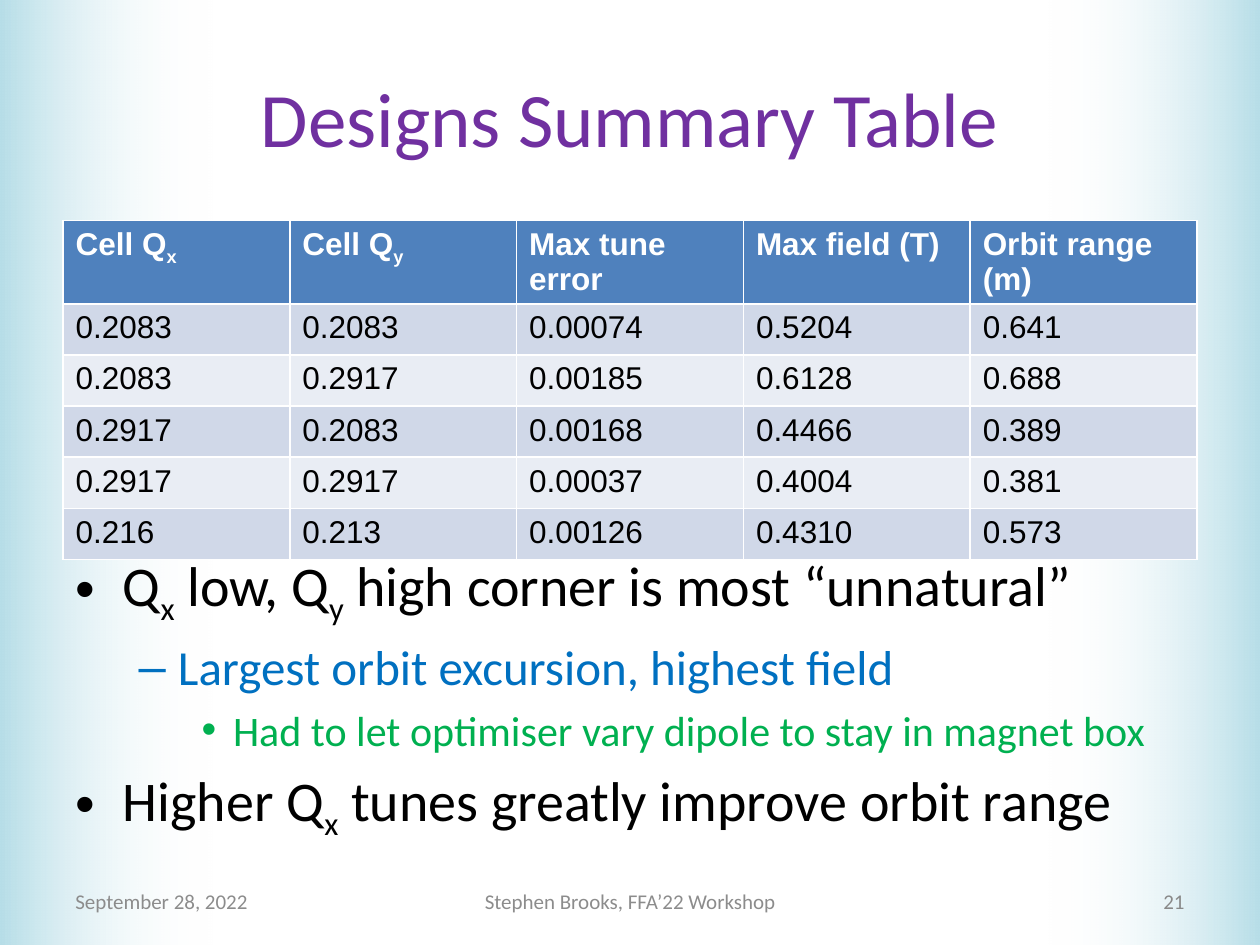
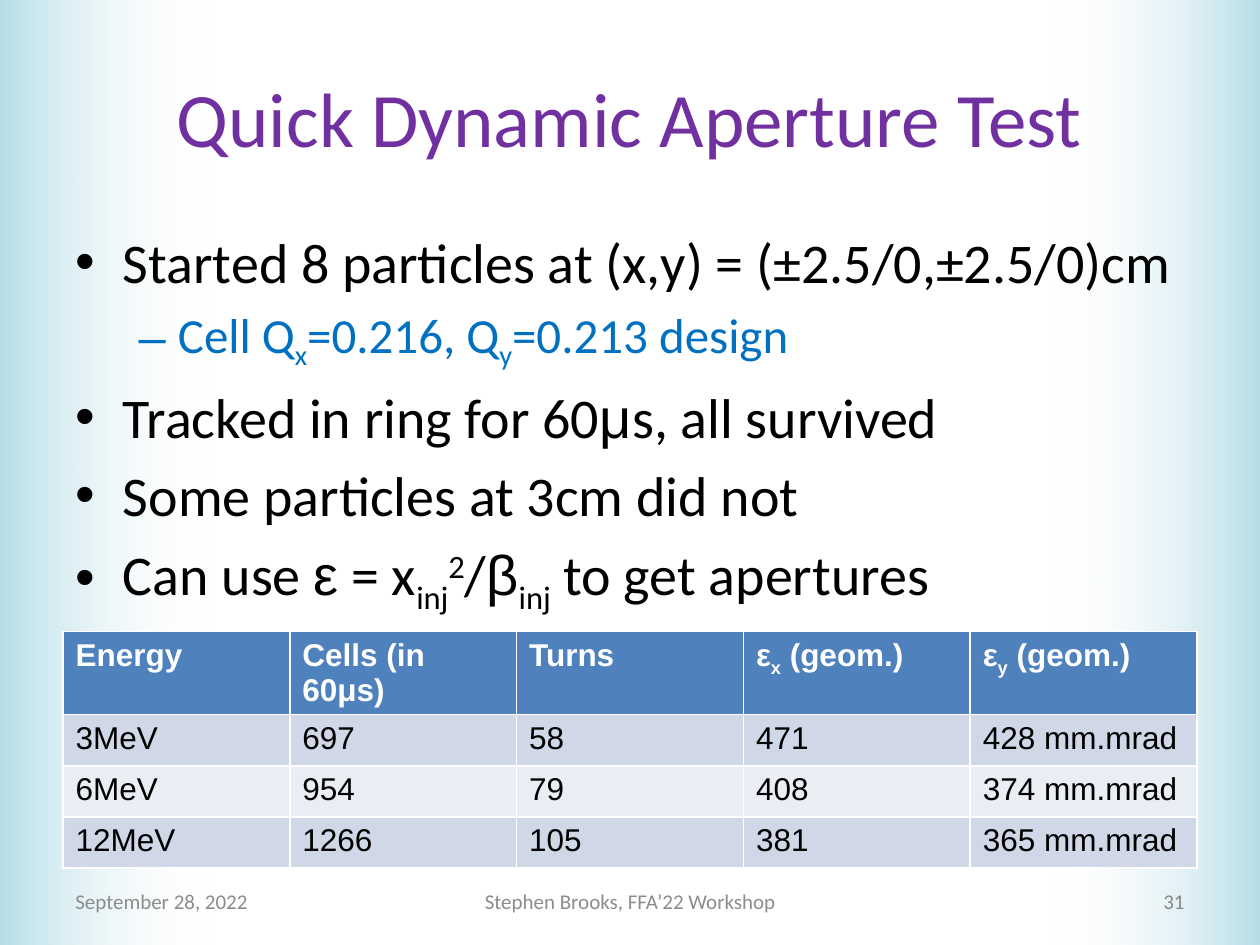
"""Build two slides on accelerator ring designs, each with a list and a results table."""
from dataclasses import dataclass

import pptx
import pptx.dml.color
import pptx.enum.shapes
import pptx.enum.text
import pptx.oxml.ns
import pptx.slide
import pptx.table
import pptx.text.text
import pptx.util
from lxml import etree
from pptx.util import Cm

COLOURS = {
    "title": "7030A0",
    "level 0": "000000",
    "level 1": "0070C0",
    "level 2": "00B050",
    "footer": "8C8C8C",
    "page": "898989",
    "band": "B7DEE8",
    "white": "FFFFFF",
    "header row": "4F81BD",
    "odd row": "D0D8E8",
    "even row": "E9EDF4",
    "cell text": "000000",
}
BASELINES = {"_": "-25000", "^": "30000"}
GREEK = {"μ", "ε", "β"}
LEVEL_SIZES = (32, 28, 24)

SLIDE_WIDTH, SLIDE_HEIGHT = Cm(25.4), Cm(19.05)
MARGIN, CONTENT_WIDTH = Cm(1.27), Cm(22.86)
BAND_WIDTH = Cm(4.29)
ROW_HEIGHT = Cm(1.03)
FOOTER_TOP, FOOTER_HEIGHT = Cm(17.66), Cm(1.01)


@dataclass(frozen=True)
class Style:
    """Look of a piece of text."""
    size: float
    colour: str
    font: str = "Calibri"
    bold: bool = False
    align: str = "LEFT"


@dataclass(frozen=True)
class Bullet:
    """One list line; bars part its runs, _ lowers and ^ raises a run."""
    text: str
    level: int = 0


@dataclass(frozen=True)
class FooterPart:
    """One of the three texts along the bottom edge."""
    text: str
    left: Cm
    width: Cm
    style: Style


@dataclass(frozen=True)
class Results:
    """A table with a header row first."""
    top: Cm
    rows: tuple[tuple[str, ...], ...]


@dataclass(frozen=True)
class Page:
    """Everything that differs between slides."""
    title: str
    number: str
    list_top: Cm
    list_height: Cm
    bullets: tuple[Bullet, ...]
    results: Results


PAGES = (
    Page(
        "Designs Summary Table", "21", Cm(10.97), Cm(6.05),
        (
            Bullet("Q|_x| low, Q|_y| high corner is most “unnatural”"),
            Bullet("Largest orbit excursion, highest field", 1),
            Bullet("Had to let optimiser vary dipole to stay in magnet box", 2),
            Bullet("Higher Q|_x| tunes greatly improve orbit range"),
        ),
        Results(Cm(4.45), (
            ("Cell Q|_x", "Cell Q|_y", "Max tune error", "Max field (T)", "Orbit range (m)"),
            ("0.2083", "0.2083", "0.00074", "0.5204", "0.641"),
            ("0.2083", "0.2917", "0.00185", "0.6128", "0.688"),
            ("0.2917", "0.2083", "0.00168", "0.4466", "0.389"),
            ("0.2917", "0.2917", "0.00037", "0.4004", "0.381"),
            ("0.216", "0.213", "0.00126", "0.4310", "0.573"),
        )),
    ),
    Page(
        "Quick Dynamic Aperture Test", "31", Cm(4.45), Cm(7.09),
        (
            Bullet("Started 8 particles at (x,y) = (±2.5/0,±2.5/0)cm"),
            Bullet("Cell Q|_x|=0.216, Q|_y|=0.213 design", 1),
            Bullet("Tracked in ring for 60|μ|s, all survived"),
            Bullet("Some particles at 3cm did not"),
            Bullet("Can use |ε| = x|_inj|^2|/|β|_inj| to get apertures"),
        ),
        Results(Cm(12.73), (
            ("Energy", "Cells (in 60μs)", "Turns", "ε|_x| (geom.)", "ε|_y| (geom.)"),
            ("3MeV", "697", "58", "471", "428 mm.mrad"),
            ("6MeV", "954", "79", "408", "374 mm.mrad"),
            ("12MeV", "1266", "105", "381", "365 mm.mrad"),
        )),
    ),
)


def rgb(name: str) -> pptx.dml.color.RGBColor:
    """Look up a named colour."""
    return pptx.dml.color.RGBColor.from_string(COLOURS[name])


def write(paragraph: pptx.text.text._Paragraph, marked: str, style: Style) -> None:
    """Fill a paragraph with runs, lowering, raising and styling them."""
    paragraph.alignment = getattr(pptx.enum.text.PP_ALIGN, style.align)
    for piece in marked.split("|"):
        run = paragraph.add_run()
        run.text = piece.lstrip("_^")
        run.font.size = pptx.util.Pt(style.size)
        run.font.name = "Arial" if piece in GREEK else style.font
        run.font.bold = style.bold
        run.font.color.rgb = rgb(style.colour)
        if piece[0] in BASELINES:
            run.font._element.set("baseline", BASELINES[piece[0]])


def add_band(slide: pptx.slide.Slide, master: pptx.slide.SlideMaster,
             left: int, rotation: int) -> None:
    """Draw a fading edge band and move it to the back of the master."""
    band = slide.shapes.add_shape(
        pptx.enum.shapes.MSO_SHAPE.RECTANGLE, left, 0, BAND_WIDTH, SLIDE_HEIGHT)
    band.rotation = rotation
    band.shadow.inherit = False
    band.line.fill.background()
    band.fill.gradient()
    band.fill.gradient_angle = 0
    for stop, position, name in zip(band.fill.gradient_stops, (0, 1), ("band", "white")):
        stop.position = position
        stop.color.rgb = rgb(name)
    qn = pptx.oxml.ns.qn
    faded = list(band._element.spPr.iter(qn("a:srgbClr")))[-1]
    etree.SubElement(faded, qn("a:alpha")).set("val", "0")
    master.shapes._spTree.insert(2, band._element)


def add_title(slide: pptx.slide.Slide, text: str) -> None:
    """Place and write the title."""
    title = slide.shapes.title
    title.left, title.top, title.width, title.height = MARGIN, Cm(0.76), CONTENT_WIDTH, Cm(3.18)
    title.text_frame.vertical_anchor = pptx.enum.text.MSO_ANCHOR.MIDDLE
    write(title.text_frame.paragraphs[0], text, Style(44, "title", align="CENTER"))


def add_list(slide: pptx.slide.Slide, page: Page) -> None:
    """Place the body placeholder and write its bullets."""
    body = slide.placeholders[1]
    body.left, body.top, body.width, body.height = (
        MARGIN, page.list_top, CONTENT_WIDTH, page.list_height)
    frame = body.text_frame
    frame.auto_size = pptx.enum.text.MSO_AUTO_SIZE.NONE
    for index, bullet in enumerate(page.bullets):
        paragraph = frame.add_paragraph() if index else frame.paragraphs[0]
        paragraph.level = bullet.level
        write(paragraph, bullet.text,
              Style(LEVEL_SIZES[bullet.level], f"level {bullet.level}"))


def add_results(slide: pptx.slide.Slide, results: Results) -> None:
    """Draw the table with a dark header and alternating rows."""
    row_count, column_count = len(results.rows), len(results.rows[0])
    grid = slide.shapes.add_table(row_count, column_count, MARGIN, results.top,
                                  CONTENT_WIDTH, ROW_HEIGHT * row_count).table
    for row_index, values in enumerate(results.rows):
        is_header = row_index == 0
        fill = "header row" if is_header else "odd row" if row_index % 2 else "even row"
        style = Style(18, "white" if is_header else "cell text", "Arial", is_header)
        for column_index, value in enumerate(values):
            cell = grid.cell(row_index, column_index)
            cell.fill.solid()
            cell.fill.fore_color.rgb = rgb(fill)
            write(cell.text_frame.paragraphs[0], value, style)


def add_footer(slide: pptx.slide.Slide, number: str) -> None:
    """Write date, venue and page number along the bottom."""
    parts = (
        FooterPart("September 28, 2022", MARGIN, Cm(5.92), Style(12, "footer")),
        FooterPart("Stephen Brooks, FFA’22 Workshop", Cm(8.68), Cm(8.05),
                   Style(12, "footer", align="CENTER")),
        FooterPart(number, Cm(18.21), Cm(5.92), Style(12, "page", align="RIGHT")),
    )
    for part in parts:
        frame = slide.shapes.add_textbox(
            part.left, FOOTER_TOP, part.width, FOOTER_HEIGHT).text_frame
        frame.word_wrap = True
        frame.vertical_anchor = pptx.enum.text.MSO_ANCHOR.MIDDLE
        write(frame.paragraphs[0], part.text, part.style)


def main() -> None:
    """Build and save the presentation."""
    deck = pptx.Presentation()
    deck.slide_width, deck.slide_height = SLIDE_WIDTH, SLIDE_HEIGHT
    for index, page in enumerate(PAGES):
        slide = deck.slides.add_slide(deck.slide_layouts[1])
        if index == 0:
            add_band(slide, deck.slide_master, 0, 0)
            add_band(slide, deck.slide_master, SLIDE_WIDTH - BAND_WIDTH, 180)
        add_title(slide, page.title)
        add_list(slide, page)
        add_results(slide, page.results)
        add_footer(slide, page.number)
    deck.save("out.pptx")


if __name__ == "__main__":
    main()
